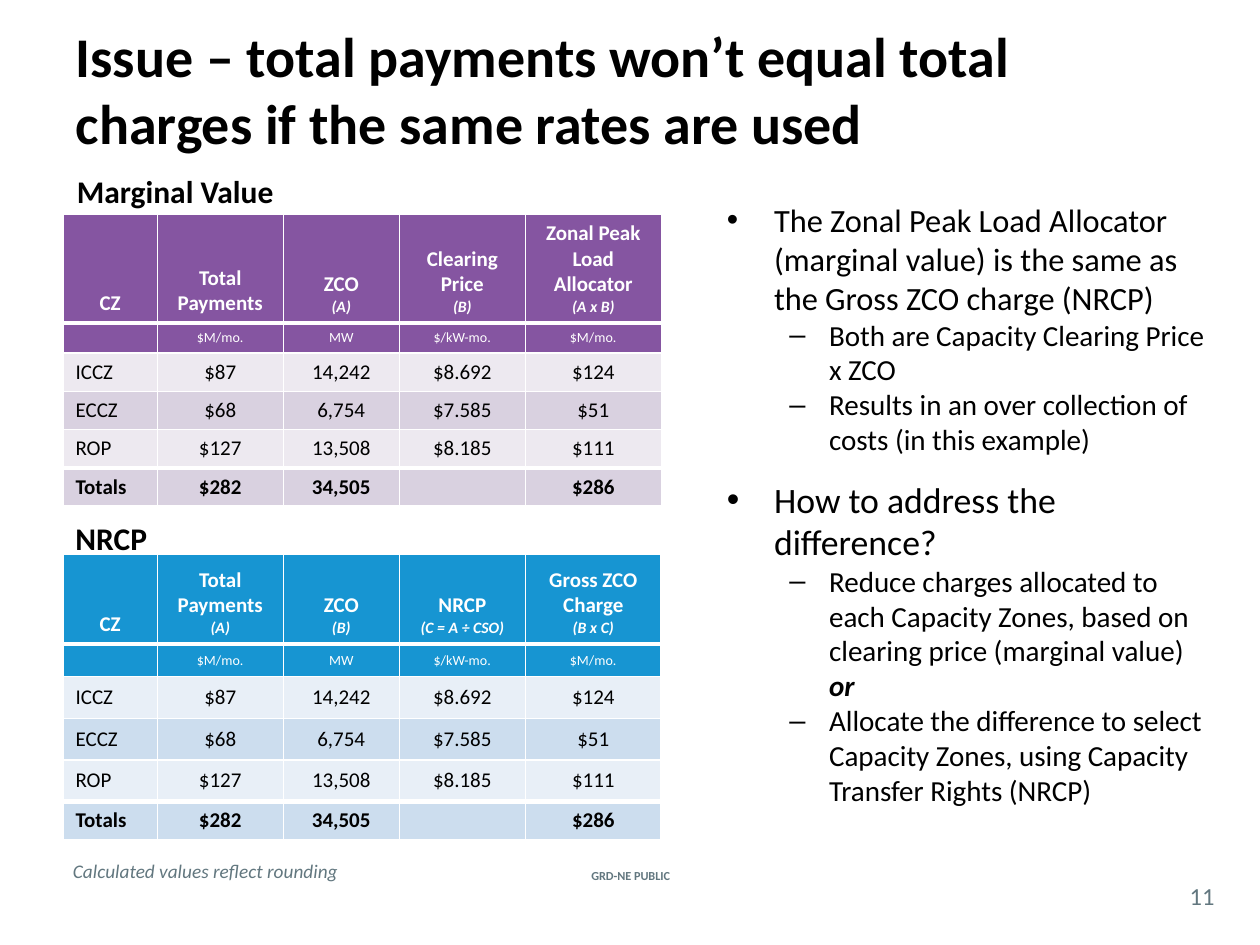
"""Build the slide comparing marginal value and NRCP payments with charges."""
from lxml.etree import SubElement
from pptx import Presentation
from pptx.dml.color import RGBColor
from pptx.enum.text import MSO_ANCHOR, MSO_AUTO_SIZE, PP_ALIGN
from pptx.oxml.ns import qn
from pptx.util import Cm, Pt

BLACK = RGBColor(0x00, 0x00, 0x00)
WHITE = RGBColor(0xFF, 0xFF, 0xFF)
SLATE = RGBColor(0x62, 0x77, 0x7F)
PURPLE = RGBColor(0x85, 0x55, 0xA1)
PURPLE_PALE = RGBColor(0xED, 0xE9, 0xF0)
PURPLE_LIGHT = RGBColor(0xD9, 0xD1, 0xE0)
BLUE = RGBColor(0x17, 0x95, 0xD2)
BLUE_PALE = RGBColor(0xE8, 0xEF, 0xF7)
BLUE_LIGHT = RGBColor(0xCC, 0xDD, 0xEE)


def add_run(paragraph, text, color, size, **look):
    run = paragraph.add_run()
    run.text = text
    run.font.color.rgb = color
    for name, value in {"name": "Calibri", "size": Pt(size), **look}.items():
        setattr(run.font, name, value)


def add_borders(cell, widths):
    properties = cell._tc.get_or_add_tcPr()
    for side, width in zip("LRTB", widths):
        line = SubElement(properties, qn(f"a:ln{side}"), w=str(Pt(width)))
        SubElement(SubElement(line, qn("a:solidFill")), qn("a:srgbClr"), val=str(WHITE))


presentation = Presentation()
presentation.slide_width, presentation.slide_height = Cm(25.4), Cm(19.05)
slide = presentation.slides.add_slide(presentation.slide_layouts[1])

title = slide.shapes.title
title.left, title.top, title.width, title.height = Cm(1.27), Cm(0.2), Cm(22.86), Cm(3.18)
title.text_frame.auto_size = MSO_AUTO_SIZE.NONE
title.text_frame.vertical_anchor = MSO_ANCHOR.MIDDLE
heading = title.text_frame.paragraphs[0]
heading.alignment = PP_ALIGN.LEFT
add_run(heading, "Issue – total payments won’t equal total charges if the same rates are used",
        BLACK, 32, bold=True)

UNITS = ["", "$M/mo.", "MW", "$/kW-mo.", "$M/mo."]
ZONES = [
    ["ICCZ", "$87", "14,242", "$8.692", "$124"],
    ["ECCZ", "$68", "6,754", "$7.585", "$51"],
    ["ROP", "$127", "13,508", "$8.185", "$111"],
    ["Totals", "$282", "34,505", "", "$286"],
]
COLUMN_WIDTHS = [1.9, 2.54, 2.34, 2.54, 2.74]
TABLES = [
    dict(top=4.32, heights=[2.08, 0.61, 0.77, 0.77, 0.77, 0.74],
         dark=PURPLE, stripes=(PURPLE_PALE, PURPLE_LIGHT), totals_rule=2.25, right_rule=1,
         headers=[["CZ"], ["Total Payments"], ["ZCO", "(A)"], ["Clearing Price", "(B)"],
                  ["Zonal Peak Load Allocator", "(A x B)"]]),
    dict(top=11.18, heights=[1.8, 0.66, 0.84, 0.84, 0.84, 0.76],
         dark=BLUE, stripes=(BLUE_PALE, BLUE_LIGHT), totals_rule=3, right_rule=2.25,
         headers=[["CZ"], ["Total Payments", "(A)"], ["ZCO", "(B)"], ["NRCP", "(C = A ÷ CSO)"],
                  ["Gross ZCO Charge", "(B x C)"]]),
]
for spec_table in TABLES:
    heights = spec_table["heights"]
    table = slide.shapes.add_table(
        len(heights), len(COLUMN_WIDTHS), Cm(1.27), Cm(spec_table["top"]),
        Cm(sum(COLUMN_WIDTHS)), Cm(sum(heights))).table
    table.first_row = table.horz_banding = False
    for column, width in zip(table.columns, COLUMN_WIDTHS):
        column.width = Cm(width)
    rules = [1, 3, 1, 1, 1, spec_table["totals_rule"], 1]
    contents = [spec_table["headers"]] + [[[text] for text in row] for row in [UNITS] + ZONES]
    for r, (row, height) in enumerate(zip(contents, heights)):
        table.rows[r].height = Cm(height)
        is_head = r < 2
        size = 8 if r == 1 else 12
        for c, lines in enumerate(row):
            cell = table.cell(r, c)
            right = spec_table["right_rule"] if c == len(row) - 1 else 1
            add_borders(cell, (1, right, rules[r], rules[r + 1]))
            cell.fill.solid()
            cell.fill.fore_color.rgb = spec_table["dark"] if is_head else spec_table["stripes"][r % 2]
            cell.vertical_anchor = MSO_ANCHOR.BOTTOM if r == 0 else MSO_ANCHOR.MIDDLE
            for n, line in enumerate(lines):
                paragraph = cell.text_frame.add_paragraph() if n else cell.text_frame.paragraphs[0]
                paragraph.alignment = PP_ALIGN.CENTER if is_head or c else PP_ALIGN.LEFT
                if line:
                    add_run(paragraph, line, WHITE if is_head else BLACK, 9 if n else size,
                            bold=r in (0, 5), italic=n > 0)
                else:
                    SubElement(paragraph._p, qn("a:endParaRPr"), sz=str(size * 100))

LABELS = [
    ("Marginal Value", (1.3, 3.35, 7.21, 1.02), PP_ALIGN.LEFT, BLACK, 18, dict(bold=True)),
    ("NRCP", (1.27, 10.34, 7.21, 0.84), PP_ALIGN.LEFT, BLACK, 18, dict(bold=True)),
    ("Calculated values reflect rounding", (1.22, 17.2, 7.09, 0.74), PP_ALIGN.LEFT, SLATE, 11,
     dict(italic=True)),
    ("GRD-NE PUBLIC", (10.85, 17.4, 3.73, 0.5), PP_ALIGN.CENTER, SLATE, 7, dict(bold=True)),
    ("11", (23.7, 17.68, 1.07, 0.74), PP_ALIGN.CENTER, SLATE, 14, {}),
]
for text, place, alignment, color, size, look in LABELS:
    frame = slide.shapes.add_textbox(*map(Cm, place)).text_frame
    frame.word_wrap = True
    if alignment == PP_ALIGN.CENTER:
        frame.vertical_anchor = MSO_ANCHOR.MIDDLE
        frame.margin_left = frame.margin_right = frame.margin_top = frame.margin_bottom = 0
    frame.paragraphs[0].alignment = alignment
    add_run(frame.paragraphs[0], text, color, size, **look)

BULLETS = [
    (0, 18.5, "The Zonal Peak Load Allocator (marginal value) is the same as the Gross ZCO charge (NRCP)", ""),
    (1, 16.6, "Both are Capacity Clearing Price x ZCO", ""),
    (1, 16.6, "Results in an over collection of costs (in this example)", ""),
    (0, 20.4, "How to address the difference?", ""),
    (1, 16.6, "Reduce charges allocated to each Capacity Zones, based on clearing price (marginal value) ", "or"),
    (1, 16.6, "Allocate the difference to select Capacity Zones, using Capacity Transfer Rights (NRCP)", ""),
]
LEVELS = [dict(mark="•", left=0.95, hang=0.95, before=12), dict(mark="–", left=2.06, hang=0.8, before=0)]
body = slide.placeholders[1]
body.left, body.top, body.width, body.height = Cm(14.4), Cm(3.91), Cm(10.16), Cm(13.23)
body.text_frame.auto_size = MSO_AUTO_SIZE.NONE
for n, (level, size, text, emphasis) in enumerate(BULLETS):
    paragraph = body.text_frame.add_paragraph() if n else body.text_frame.paragraphs[0]
    style = LEVELS[level]
    paragraph.level = level
    properties = paragraph._p.get_or_add_pPr()
    properties.set("marL", str(Cm(style["left"])))
    properties.set("indent", str(-Cm(style["hang"])))
    SubElement(properties, qn("a:buChar"), char=style["mark"])
    paragraph.space_before = Pt(style["before"] if n else 0)
    add_run(paragraph, text, BLACK, size)
    if emphasis:
        add_run(paragraph, emphasis, BLACK, size, bold=True, italic=True)

presentation.save("out.pptx")
